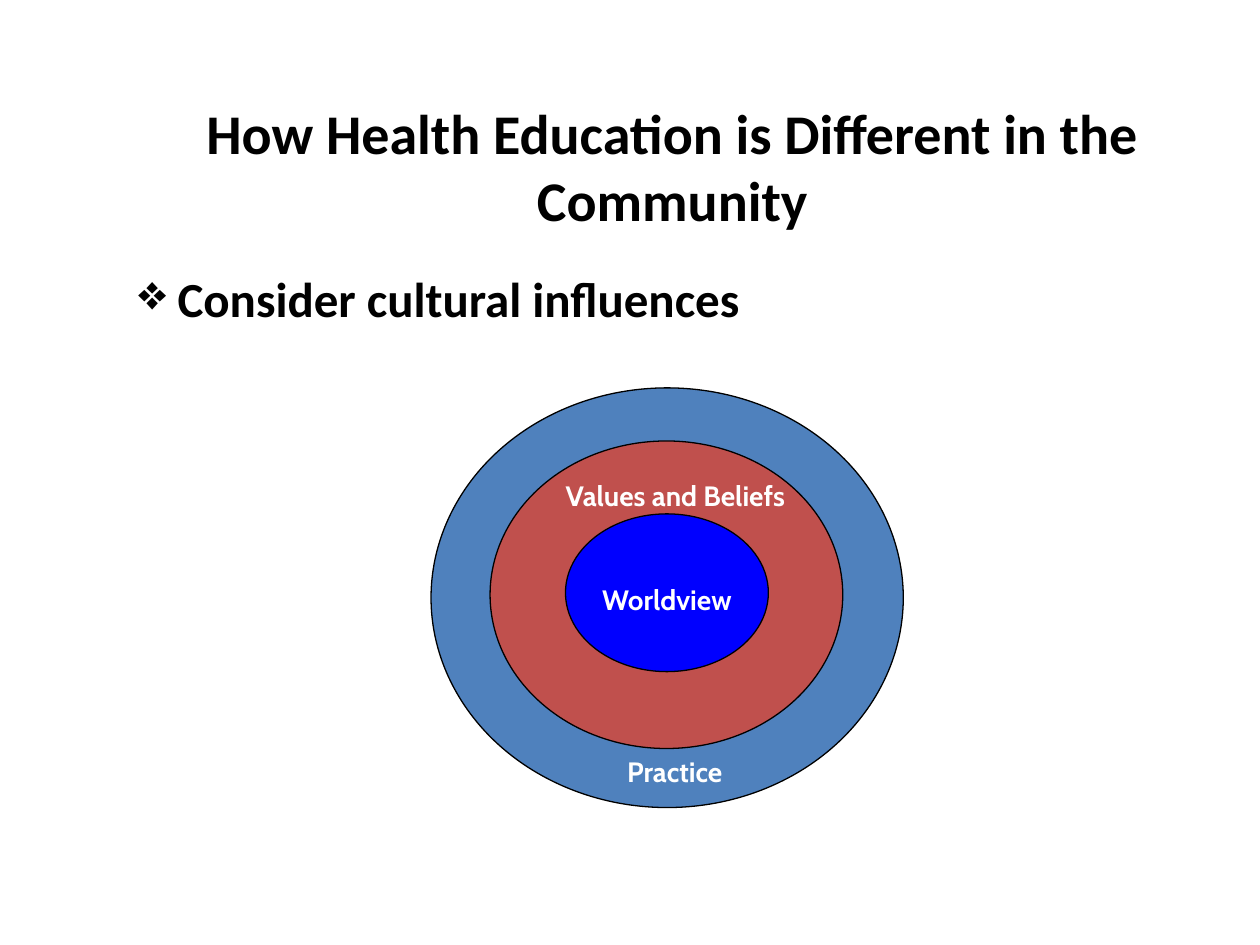
from lxml import etree
from pptx import Presentation
from pptx import util as u
from pptx.dml.color import RGBColor
from pptx.enum import shapes, text
from pptx.oxml import ns

BLACK = RGBColor(0x00, 0x00, 0x00)
WHITE = RGBColor(0xFF, 0xFF, 0xFF)
STEEL = RGBColor(0x4F, 0x81, 0xBD)
BRICK = RGBColor(0xC0, 0x50, 0x4D)
BLUE = RGBColor(0x00, 0x00, 0xFF)


def set_font(para, name, size, color):
    para.font.name = name
    para.font.size = u.Pt(size)
    para.font.bold = True
    para.font.color.rgb = color


deck = Presentation()
deck.slide_width, deck.slide_height = u.Cm(25.4), u.Cm(19.05)
page = deck.slides.add_slide(deck.slide_layouts[5])

title = page.shapes.title
title.left, title.top = u.Cm(2.34), u.Cm(2.11)
title.width, title.height = u.Cm(22.43), u.Cm(2.46)
title.text_frame.text = "How Health Education is Different in the Community"
title.text_frame.auto_size = text.MSO_AUTO_SIZE.NONE
title.text_frame.vertical_anchor = text.MSO_ANCHOR.MIDDLE
para = title.text_frame.paragraphs[0]
para.alignment = text.PP_ALIGN.CENTER
set_font(para, "Calibri", 32, BLACK)

body = page.shapes.add_textbox(u.Cm(1.27), u.Cm(5.28), u.Cm(22.86), u.Cm(11.73))
body.text_frame.word_wrap = True
para = body.text_frame.paragraphs[0]
para.text = "Consider cultural influences"
para.level = 1
properties = para._p.get_or_add_pPr()
properties.set("marL", str(u.Cm(2.06)))
properties.set("indent", str(-u.Cm(0.79)))
bullet = etree.SubElement(properties, ns.qn("a:buChar"))
bullet.set("char", "❖")
set_font(para, "Calibri", 28, BLACK)

rings = [
    ("Practice", STEEL, (8.69, 7.82, 9.52, 8.46), (11.05, 15.09, 5.11)),
    ("Values and Beliefs", BRICK, (9.88, 8.89, 7.11, 6.2), (9.88, 9.53, 7.47)),
    ("Worldview", BLUE, (11.4, 10.36, 4.09, 3.18), (11.4, 11.61, 4.09)),
]
for label, color, oval_place, label_place in rings:
    group = page.shapes.add_group_shape()
    oval = group.shapes.add_shape(
        shapes.MSO_SHAPE.OVAL, *[u.Cm(length) for length in oval_place])
    oval.shadow.inherit = False
    oval.fill.solid()
    oval.fill.fore_color.rgb = color
    oval.line.color.rgb = BLACK
    oval.line.width = u.Pt(0.75)

    box = group.shapes.add_textbox(
        *[u.Cm(length) for length in label_place], u.Cm(0.94))
    box.text_frame.word_wrap = True
    box.text_frame.auto_size = text.MSO_AUTO_SIZE.SHAPE_TO_FIT_TEXT
    para = box.text_frame.paragraphs[0]
    para.text = label
    para.alignment = text.PP_ALIGN.CENTER
    set_font(para, "Cabin", 16, WHITE)

deck.save("out.pptx")
